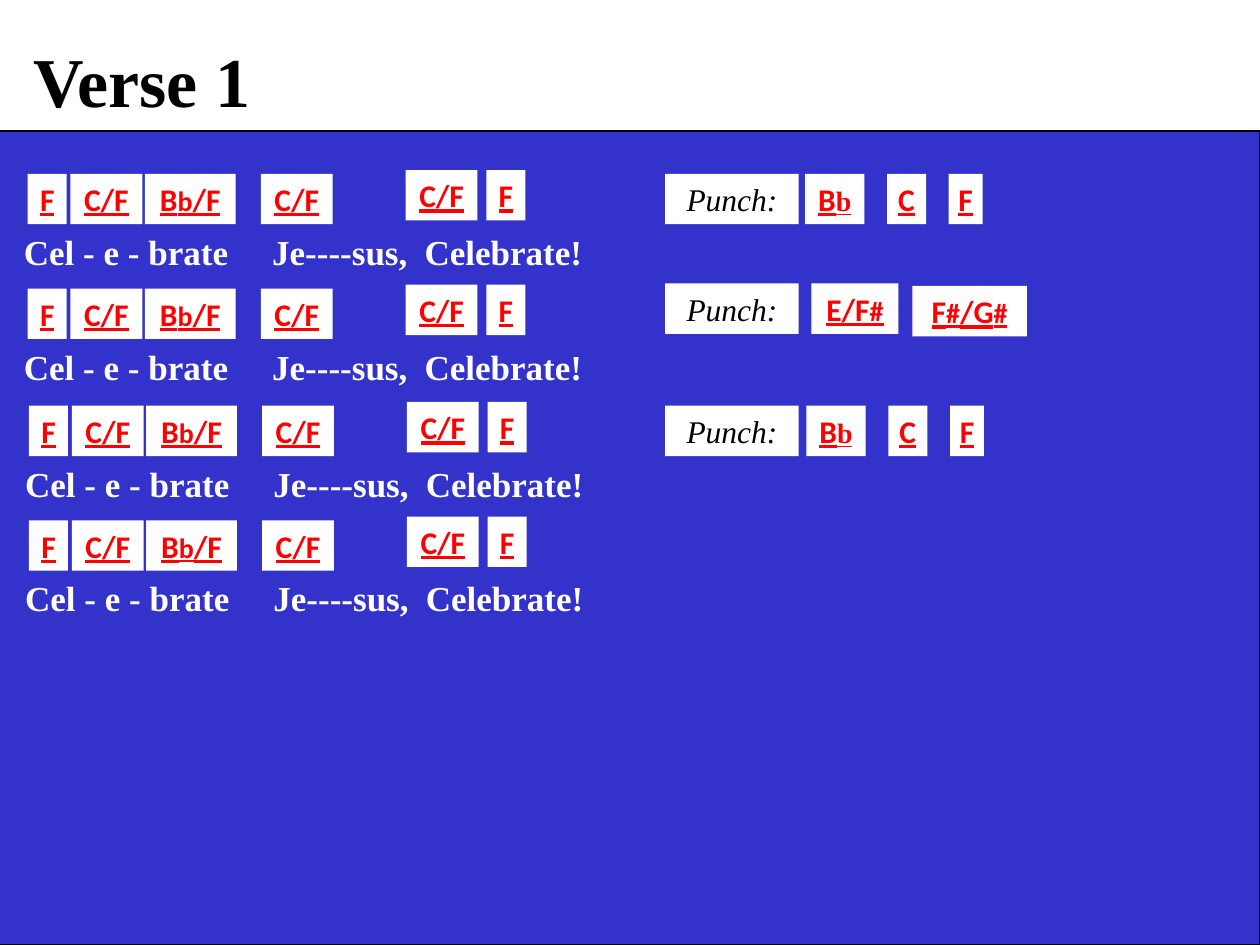
"""Build the Verse 1 chord slide."""
from itertools import groupby
from lxml.etree import SubElement
from pptx import Presentation
from pptx.dml.color import RGBColor
from pptx.enum.shapes import MSO_SHAPE
from pptx.enum.text import MSO_ANCHOR, PP_ALIGN
from pptx.oxml.ns import qn
from pptx.util import Inches, Pt

THEME = {
    "blue": RGBColor(0x33, 0x33, 0xCC), "white": RGBColor(255, 255, 255),
    "black": RGBColor(0, 0, 0), "red": RGBColor(255, 0, 0),
    "serif": "Times New Roman", "sans": "Calibri",
    "title": Pt(40), "lyric": Pt(20), "chord": Pt(18), "accidental": Pt(16),
}
TITLE = "Verse 1"
LYRIC = ["Cel - e - brate", "Je----sus,", "Celebrate!"]
LYRIC_TABS = [1.97, 3.18]
CHIP_H = 0.4
VERSE_CHORDS = [
    ("F", 0.22, 0, 0.31), ("C/F", 0.56, 0, 0.57), ("Bb/F", 1.15, 0, 0.72),
    ("C/F", 2.07, 0, 0.57), ("C/F", 3.22, -0.03, 0.57), ("F", 3.86, -0.03, 0.31),
]
PUNCH = "Punch:"
PUNCH_BOX = (5.28, 1.06)
PUNCH_FLAT = [("Bb", 6.39, 0, 0.47), ("C", 7.04, 0, 0.31), ("F", 7.53, 0, 0.27)]
PUNCH_SHARP = [("E/F#", 6.44, 0, 0.69), ("F#/G#", 7.24, 0.02, 0.91)]
LINES = [
    {"top": 1.38, "shift": 0, "punch": PUNCH_FLAT, "punch_top": 1.38},
    {"top": 2.29, "shift": 0, "punch": PUNCH_SHARP, "punch_top": 2.25},
    {"top": 3.22, "shift": 0.01, "punch": PUNCH_FLAT, "punch_top": 3.22},
    {"top": 4.13, "shift": 0.01, "punch": [], "punch_top": 4.13},
]


def add_box(s, x, y, w, h, fill="white"):
    sp = s.shapes.add_shape(MSO_SHAPE.RECTANGLE, *map(Inches, (x, y, w, h)))
    sp.shadow.inherit = False
    sp.fill.solid()
    sp.fill.fore_color.rgb = THEME[fill]
    sp.line.fill.background()
    sp.text_frame.vertical_anchor = MSO_ANCHOR.TOP
    return sp


def style(p, font, size, color, align=PP_ALIGN.LEFT):
    p.alignment = align
    p.font.name = THEME[font]
    p.font.size = THEME[size]
    p.font.color.rgb = THEME[color]
    return p


def add_chord(s, chord, x, y, w, flat_font="sans"):
    tf = add_box(s, x, y, w, CHIP_H).text_frame
    tf.word_wrap = False
    p = style(tf.paragraphs[0], "sans", "chord", "red", PP_ALIGN.CENTER)
    p.font.bold = p.font.underline = True
    for small, chars in groupby(chord, lambda c: c in "b#"):
        r = p.add_run()
        r.text = "".join(chars)
        if small:
            r.font.size = THEME["accidental"]
        if r.text == "b":
            r.font.name = THEME[flat_font]


def add_punch(s, chords, y, shift):
    x, w = PUNCH_BOX
    tf = add_box(s, x, y, w, CHIP_H).text_frame
    tf.word_wrap = False
    p = style(tf.paragraphs[0], "serif", "chord", "black", PP_ALIGN.CENTER)
    p.text = PUNCH
    p.font.italic = True
    for chord, left, dy, width in chords:
        add_chord(s, chord, left + shift, y + dy, width, "serif")


def add_lyric(s, x, y):
    tf = s.shapes.add_textbox(*map(Inches, (x, y, 10, 0.44))).text_frame
    tf.word_wrap = True
    tf.margin_left = Inches(0.17)
    p = style(tf.paragraphs[0], "serif", "lyric", "white")
    p.text = "\t".join(LYRIC)
    p.font.bold = True
    tabs = p._p.get_or_add_pPr().makeelement(qn("a:tabLst"))
    p._p.pPr.insert_element_before(tabs, "a:defRPr", "a:extLst")
    for pos in LYRIC_TABS:
        SubElement(tabs, qn("a:tab"), pos=str(Inches(pos)), algn="l")


def main():
    prs = Presentation()
    prs.slide_width, prs.slide_height = Inches(10), Inches(7.5)
    s = prs.slides.add_slide(prs.slide_layouts[6])
    panel = add_box(s, -0.02, 1.04, 10.02, 6.46, "blue")
    panel.line.color.rgb = THEME["black"]
    panel.line.width = Pt(0.75)
    tf = add_box(s, 0.17, 0.25, 3.33, 0.77).text_frame
    p = style(tf.paragraphs[0], "serif", "title", "black")
    p.text = TITLE
    p.font.bold = True
    for line in LINES:
        top, shift = line["top"], line["shift"]
        add_lyric(s, 0.02 + shift, top + CHIP_H)
        for chord, x, dy, w in VERSE_CHORDS:
            add_chord(s, chord, x + shift, top + dy, w)
        if line["punch"]:
            add_punch(s, line["punch"], line["punch_top"], shift)
    prs.save("out.pptx")


if __name__ == "__main__":
    main()
